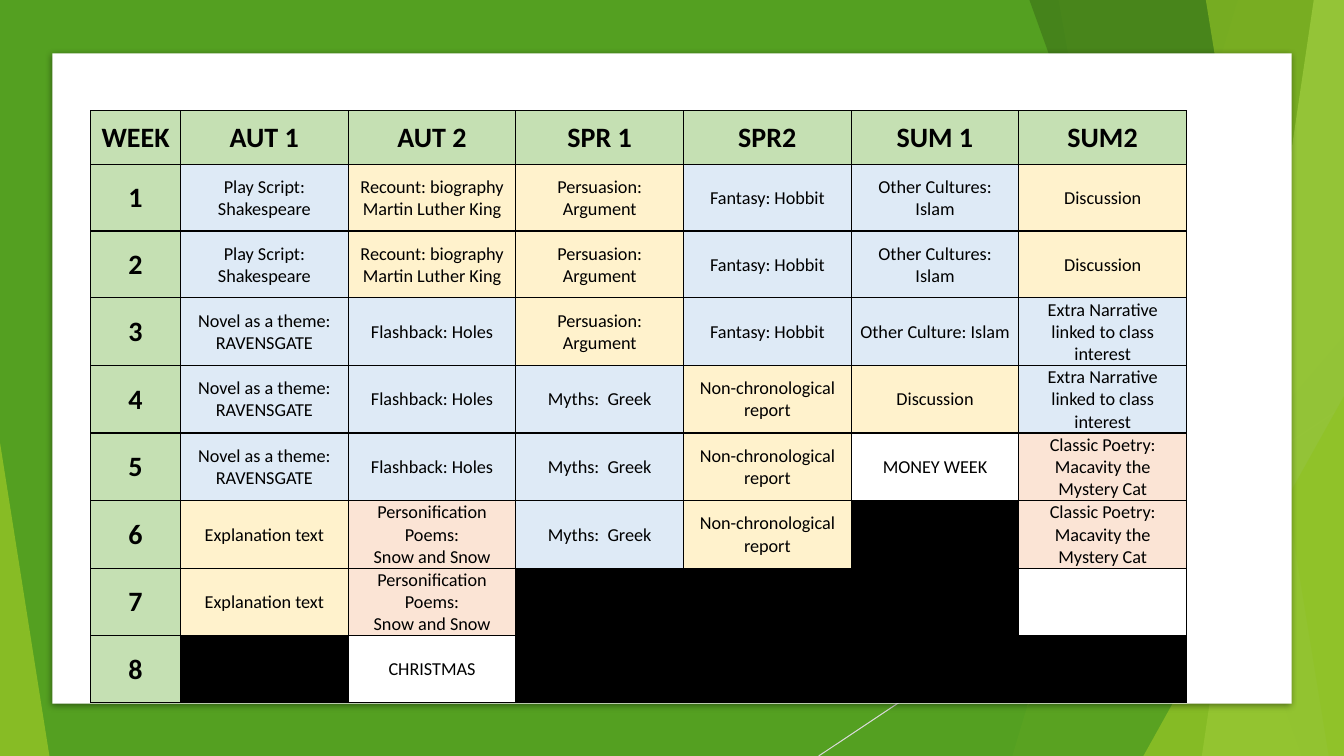
from lxml.etree import SubElement
from pptx import Presentation
from pptx.dml.color import RGBColor
from pptx.enum.shapes import MSO_CONNECTOR, MSO_SHAPE
from pptx.enum.text import MSO_ANCHOR, PP_ALIGN
from pptx.oxml import parse_xml
from pptx.oxml.ns import nsdecls, qn
from pptx.util import Inches, Pt

COLORS = {
    "green": "54A021", "lime": "90C226", "forest": "3F7819", "pale": "C0E474",
    "rule": "D9D9D9", "white": "FFFFFF", "black": "000000",
    "head": "C5E0B3", "story": "DEEAF6", "fact": "FFF2CC", "poem": "FBE4D5",
}
WIDE, HIGH = 13.33, 7.5

# Each term: name, then blocks of (kind, text, number of weeks)
TERMS = [
    ("AUT 1", [("story", "Play Script:\nShakespeare", 2),
               ("story", "Novel as a theme: RAVENSGATE", 3),
               ("fact", "Explanation text", 2), ("black", "", 1)]),
    ("AUT 2", [("fact", "Recount: biography\nMartin Luther King", 2),
               ("story", "Flashback: Holes", 3),
               ("poem", "Personification Poems:\nSnow and Snow", 2),
               ("white", "CHRISTMAS", 1)]),
    ("SPR 1", [("fact", "Persuasion:\nArgument", 3),
               ("story", "Myths:  Greek", 3), ("black", "", 2)]),
    ("SPR2", [("story", "Fantasy: Hobbit", 3),
              ("fact", "Non-chronological report", 3), ("black", "", 2)]),
    ("SUM 1", [("story", "Other Cultures: Islam", 2),
               ("story", "Other Culture: Islam", 1), ("fact", "Discussion", 1),
               ("white", "MONEY WEEK", 1), ("black", "", 3)]),
    ("SUM2", [("fact", "Discussion", 2),
              ("story", "Extra Narrative linked to class interest", 2),
              ("poem", "Classic Poetry: Macavity the Mystery Cat", 2),
              ("white", "", 1), ("black", "", 1)]),
]
WEEKS = 8


def tint(name):
    return RGBColor.from_string(COLORS[name])


def paint(shape, color, alpha=100):
    """Give a shape a plain fill, with no line and no shadow."""
    shape.shadow.inherit = False
    shape.line.fill.background()
    shape.fill.solid()
    shape.fill.fore_color.rgb = tint(color)
    if alpha < 100:
        hue = shape.element.spPr.find(qn("a:solidFill"))[0]
        SubElement(hue, qn("a:alpha"), val=str(alpha * 1000))
    return shape


def add_block(slide, kind, box, color, alpha=100):
    place = [Inches(n) for n in box]
    return paint(slide.shapes.add_shape(kind, *place), color, alpha)


def add_wedge(slide, box, top, foot, color, alpha):
    """Draw a band whose left edge slants from top to foot."""
    left, y, width, height = box
    right, base = left + width, y + height
    points = [(Inches(a), Inches(b)) for a, b in
              [(top, y), (right, y), (right, base), (foot, base)]]
    form = slide.shapes.build_freeform(*points[0])
    form.add_line_segments(points[1:], close=True)
    paint(form.convert_to_shape(), color, alpha)


def add_peak(slide, box, tip, color, alpha):
    peak = add_block(slide, MSO_SHAPE.ISOSCELES_TRIANGLE, box, color, alpha)
    peak.adjustments[0] = tip


def add_scene(slide, box):
    """Green ground with the facets at its sides."""
    left, top, width, height = box
    right, base = left + width, top + height
    add_block(slide, MSO_SHAPE.RECTANGLE, box, "green")

    # Slanted line
    line = slide.shapes.add_connector(
        MSO_CONNECTOR.STRAIGHT, Inches(right), Inches(top + 4.03),
        Inches(left + 8.12), Inches(base))
    line.line.color.rgb = tint("rule")
    line.line.width = Pt(0.75)
    SubElement(line.element.spPr, qn("a:effectLst"))

    # Facets: start of the top edge, start of the bottom edge
    def wedge(head, foot, color, alpha):
        start = left + min(head, foot)
        add_wedge(slide, (start, top, right - start, height),
                  left + head, left + foot, color, alpha)

    def peak(x, y, end, tip, color, alpha):
        add_peak(slide, (left + x, top + y, end - x, height - y),
                 tip, color, alpha)

    wedge(12.28, 10.04, "lime", 30)
    wedge(10.5, 11.83, "lime", 20)
    peak(9.77, 3.33, width, 1, "green", 72)
    wedge(10.21, 12.91, "forest", 70)
    wedge(13.03, 11.92, "pale", 70)
    wedge(11.96, 13.18, "lime", 65)
    peak(11.34, 3.93, width, 1, "lime", 80)
    peak(0, 4.39, 0.49, 0, "lime", 85)


def add_card(slide, box):
    """White panel with a soft shadow."""
    card = add_block(slide, MSO_SHAPE.RECTANGLE, box, "white")
    glow = card.element.spPr.find(qn("a:effectLst"))
    glow.append(parse_xml(
        f'<a:outerShdw {nsdecls("a")} blurRad="63500" dist="17780" '
        f'dir="5400000" algn="t" rotWithShape="0">'
        f'<a:srgbClr val="{COLORS["black"]}"><a:alpha val="43000"/>'
        f'</a:srgbClr></a:outerShdw>'))


def write(frame, text, size=13, bold=False, color="black"):
    frame.text = text
    for para in frame.paragraphs:
        para.alignment = PP_ALIGN.CENTER
        font = para.font
        font.name, font.size, font.bold = "Calibri", Pt(size), bold
        font.color.rgb = tint(color)
        for run in para.runs:
            run.font.size, run.font.name = Pt(size), "Calibri"


def fill_cell(cell, text, color, **style):
    cell.fill.solid()
    cell.fill.fore_color.rgb = tint(color)
    cell.vertical_anchor = MSO_ANCHOR.MIDDLE
    cell.margin_left = cell.margin_right = Inches(0.09)
    cell.margin_top, cell.margin_bottom = Inches(0.01), 0
    write(cell.text_frame, text, **style)
    props = cell._tc.get_or_add_tcPr()
    for spot, side in enumerate("LRTB"):
        props.insert(spot, parse_xml(
            f'<a:ln{side} {nsdecls("a")} w="12700"><a:solidFill>'
            f'<a:srgbClr val="{COLORS["black"]}"/></a:solidFill></a:ln{side}>'))


def add_plan(slide, box):
    """Year plan: a row for each week, a column for each term."""
    left, top, width, height = box
    first, head = 0.89, 0.53
    table = slide.shapes.add_table(
        WEEKS + 1, len(TERMS) + 1, *[Inches(n) for n in box]).table
    table.first_row = table.horz_banding = False
    for n, col in enumerate(table.columns):
        col.width = Inches((width - first) / len(TERMS) if n else first)
    for n, row in enumerate(table.rows):
        row.height = Inches((height - head) / WEEKS if n else head)

    # Week column
    for week in range(WEEKS + 1):
        label = str(week) if week else "WEEK"
        fill_cell(table.cell(week, 0), label, "head", size=20, bold=True)

    # Term columns
    for col, (name, blocks) in enumerate(TERMS, 1):
        fill_cell(table.cell(0, col), name, "head", size=20, bold=True)
        weeks = [(text, kind) for kind, text, count in blocks
                 for _ in range(count)]
        for week, (text, kind) in enumerate(weeks, 1):
            fill_cell(table.cell(week, col), text, kind)


def main():
    deck = Presentation()
    deck.slide_width, deck.slide_height = Inches(WIDE), Inches(HIGH)
    slide = deck.slides.add_slide(deck.slide_layouts[6])
    add_scene(slide, (0, 0, WIDE, HIGH))
    add_card(slide, (0.52, 0.53, 12.29, 6.45))
    add_plan(slide, (0.9, 1.1, 10.87, 5.83))
    deck.save("out.pptx")


if __name__ == "__main__":
    main()
